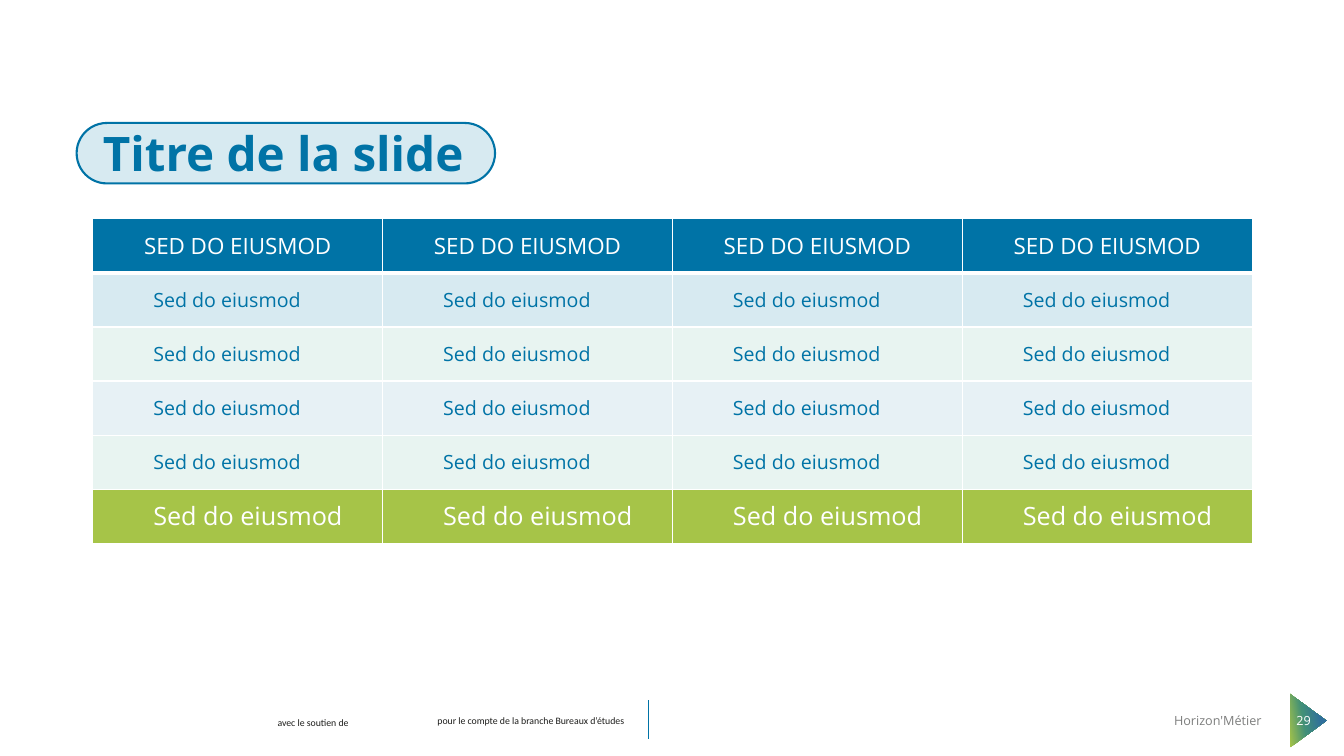
"""Build a title slide with a four-column table and a footer band."""
import lxml.etree
import pptx
import pptx.dml.color
import pptx.enum.shapes
import pptx.enum.text
import pptx.oxml
import pptx.oxml.ns
import pptx.util

Inches = pptx.util.Inches
Shape = pptx.enum.shapes.MSO_SHAPE
Align = pptx.enum.text.PP_ALIGN
Anchor = pptx.enum.text.MSO_ANCHOR

THEME = {
    "blue": "0073A6", "pale_blue": "D7EAF1", "mint": "E8F4F1", "mist": "E7F1F5",
    "green": "A6C448", "teal": "419079", "navy": "306F9C",
    "white": "FFFFFF", "ink": "1D1D1B", "grey": "7D7E7D",
    "title": 34, "head": 16, "body": 14, "total": 18, "footer": 9, "credit": 7,
    "font": "Open Sans", "credit_font": "Calibri",
}


def rgb(name):
    """Return the theme colour with this name."""
    return pptx.dml.color.RGBColor.from_string(THEME[name])


def write(p, text, size, color, font="font", bold=False, align=None):
    """Put one formatted run in a paragraph."""
    r = p.add_run()
    r.text = text
    p.alignment = align
    style = {"size": pptx.util.Pt(THEME[size]), "name": THEME[font], "bold": bold}
    for key, value in style.items():
        setattr(r.font, key, value)
    r.font.color.rgb = rgb(color)


prs = pptx.Presentation()
prs.slide_width = Inches(13.33)
prs.slide_height = Inches(7.5)
s = prs.slides.add_slide(prs.slide_layouts[5])

arrow = s.shapes.add_shape(Shape.ISOSCELES_TRIANGLE, Inches(12.71), Inches(6.97), Inches(0.53), Inches(0.36))
arrow.rotation = 90
arrow.shadow.inherit = False
arrow.line.fill.background()
arrow.fill.gradient()
grad = arrow._element.spPr.find(pptx.oxml.ns.qn("a:gradFill"))
stops = "".join(
    f'<a:gs pos="{pos * 1000}"><a:srgbClr val="{THEME[name]}"/></a:gs>'
    for pos, name in ((0, "green"), (41, "teal"), (80, "navy"))
)
grad.getparent().replace(grad, pptx.oxml.parse_xml(
    f'<a:gradFill {pptx.oxml.ns.nsdecls("a")} rotWithShape="1"><a:gsLst>{stops}</a:gsLst>'
    f'<a:lin ang="{260 * 60000}" scaled="0"/></a:gradFill>'
))

divider = s.shapes.add_connector(
    pptx.enum.shapes.MSO_CONNECTOR.STRAIGHT, Inches(6.43), Inches(7.33), Inches(6.43), Inches(6.94)
)
divider.line.color.rgb = rgb("blue")
divider.line.width = pptx.util.Pt(0.5)
lxml.etree.SubElement(divider._element.spPr, pptx.oxml.ns.qn("a:effectLst"))

pill = s.shapes.add_shape(Shape.ROUNDED_RECTANGLE, Inches(0.76), Inches(1.22), Inches(4.15), Inches(0.6))
pill.adjustments[0] = 0.5
pill.shadow.inherit = False
pill.fill.solid()
pill.fill.fore_color.rgb = rgb("pale_blue")
pill.line.color.rgb = rgb("blue")
pill.line.width = pptx.util.Pt(1.5)

title = s.shapes.title
box = {"left": 0.92, "top": 0.4, "width": 11.5, "height": 1.45}
for key, value in box.items():
    setattr(title, key, Inches(value))
pill._element.addnext(title._element)
tf = title.text_frame
tf.vertical_anchor = Anchor.BOTTOM
tf.paragraphs[0].line_spacing = 0.9
write(tf.paragraphs[0], "Titre de la slide", "title", "blue", bold=True, align=Align.LEFT)

rows = [
    ("SED DO EIUSMOD", "blue", "head", "white"),
    ("Sed do eiusmod", "pale_blue", "body", "blue"),
    ("Sed do eiusmod", "mint", "body", "blue"),
    ("Sed do eiusmod", "mist", "body", "blue"),
    ("Sed do eiusmod", "mint", "body", "blue"),
    ("Sed do eiusmod", "green", "total", "white"),
]
table = s.shapes.add_table(len(rows), 4, Inches(0.92), Inches(2.17), Inches(11.5), Inches(3.22)).table
for row, (text, fill, size, color) in zip(table.rows, rows):
    for cell in row.cells:
        cell.vertical_anchor = Anchor.MIDDLE
        cell.fill.solid()
        cell.fill.fore_color.rgb = rgb(fill)
        p = cell.text_frame.paragraphs[0]
        if size == "head":
            write(p, text, size, color, align=Align.CENTER)
            cell._tc.get_or_add_tcPr().insert(0, pptx.oxml.parse_xml(
                f'<a:lnB {pptx.oxml.ns.nsdecls("a")} w="{pptx.util.Pt(3)}"><a:solidFill>'
                f'<a:srgbClr val="{THEME["white"]}"/></a:solidFill></a:lnB>'
            ))
        else:
            p.level = 1
            p._p.get_or_add_pPr().set("marL", str(Inches(0.5)))
            write(p, text, size, color, align=Align.LEFT)

footers = [
    ("avec le soutien de", 2.39, 7.06, 1.43, 0.22, "credit", "ink", "credit_font", Align.CENTER, Anchor.TOP),
    ("pour le compte de la branche Bureaux d’études", 3.65, 7.04, 3.23, 0.22,
     "credit", "ink", "credit_font", Align.CENTER, Anchor.TOP),
    ("Horizon'Métier", 9.01, 6.95, 3.6, 0.4, "footer", "grey", "font", Align.RIGHT, Anchor.MIDDLE),
    ("29", 12.61, 6.95, 0.64, 0.4, "footer", "white", "font", Align.CENTER, Anchor.MIDDLE),
]
for text, left, top, width, height, size, color, font, align, anchor in footers:
    sp = s.shapes.add_textbox(Inches(left), Inches(top), Inches(width), Inches(height))
    tf = sp.text_frame
    tf.word_wrap = True
    tf.vertical_anchor = anchor
    write(tf.paragraphs[0], text, size, color, font, align=align)

prs.save("out.pptx")
